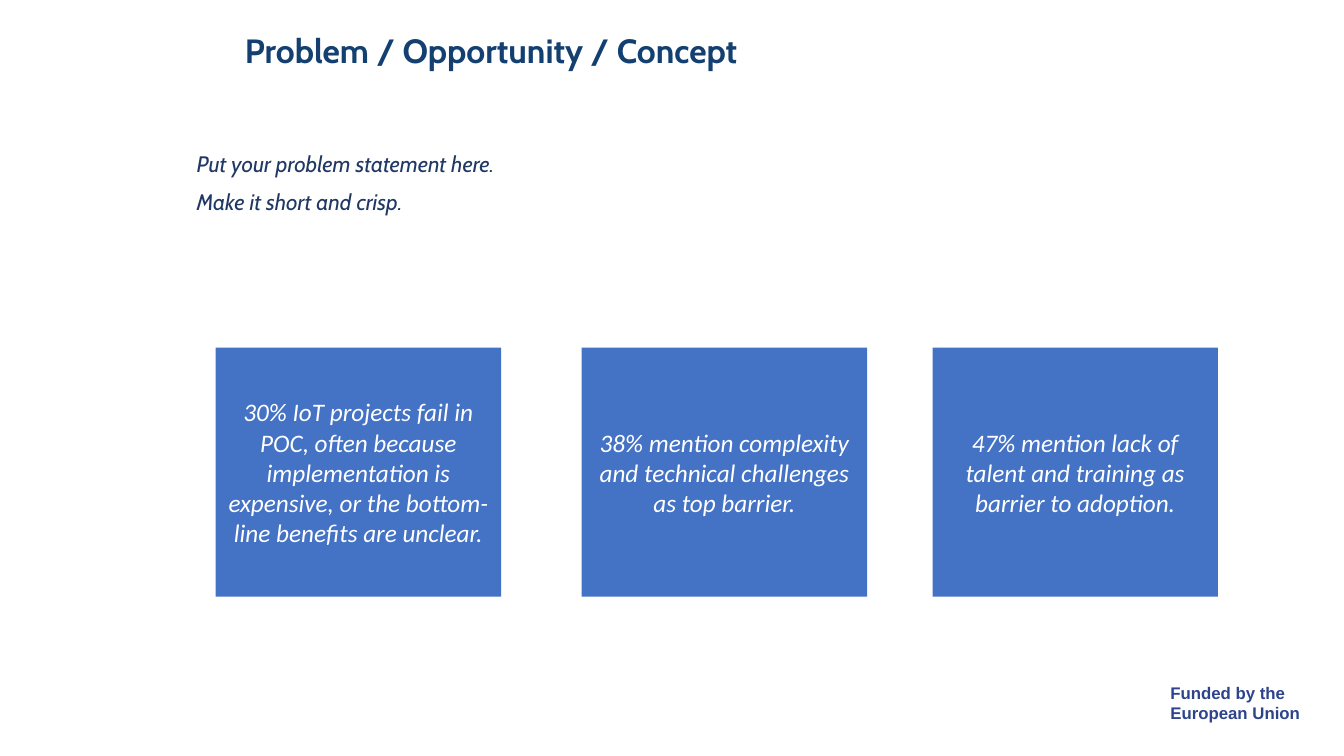
import pptx
import pptx.util
import pptx.dml.color
import pptx.enum.shapes
import pptx.enum.text
import pptx.oxml

Inches, Pt = pptx.util.Inches, pptx.util.Pt
ALIGN = pptx.enum.text.PP_ALIGN
ANCHOR = pptx.enum.text.MSO_ANCHOR

COLOURS = {
    "title": "134070",
    "body": "203864",
    "card": "4472C4",
    "white": "FFFFFF",
    "fund": "2D438B",
}
CARDS = [
    (2.14, "30% IoT projects fail in POC, often because implementation is "
           "expensive, or the bottom-line benefits are unclear."),
    (5.77, "38% mention complexity and technical challenges as top barrier."),
    (9.25, "47% mention lack of talent and training as barrier to adoption."),
]


def colour(name):
    return pptx.dml.color.RGBColor.from_string(COLOURS[name])


def place(shape, box):
    shape.left, shape.top, shape.width, shape.height = map(Inches, box)


def write(shape, lines, face, size, tint, bold=False, italic=False,
          align=ALIGN.LEFT, anchor=ANCHOR.TOP, gap=0, spacing=1.0):
    """Fill a shape with unbulleted paragraphs of one style."""
    frame = shape.text_frame
    frame.text = "\n".join(lines)
    frame.word_wrap = True
    frame.auto_size = pptx.enum.text.MSO_AUTO_SIZE.NONE
    frame.vertical_anchor = anchor
    for i, para in enumerate(frame.paragraphs):
        props = para._p.get_or_add_pPr()
        props.set("marL", "0")
        props.set("indent", "0")
        props.append(pptx.oxml.parse_xml(
            '<a:buNone xmlns:a="http://schemas.openxmlformats.org/'
            'drawingml/2006/main"/>'))
        para.alignment = align
        para.line_spacing = spacing
        para.space_before = Pt(gap if i else 0)
        font = para.font
        font.name, font.size = face, Pt(size)
        font.bold, font.italic = bold, italic
        font.color.rgb = colour(tint)


def add_title(slide, box):
    title = slide.shapes.title
    place(title, box)
    write(title, ["Problem / Opportunity / Concept"], "Cabin", 24, "title",
          bold=True, anchor=ANCHOR.MIDDLE, spacing=0.9)


def add_body(slide, box):
    body = slide.placeholders[1]
    place(body, box)
    write(body, ["Put your problem statement here.",
                 "Make it short and crisp."],
          "Cabin", 16, "body", italic=True, gap=10, spacing=0.9)
    body.text_frame.margin_top = Inches(0.49)


def add_card(slide, box, text):
    card = slide.shapes.add_shape(
        pptx.enum.shapes.MSO_SHAPE.RECTANGLE, *map(Inches, box))
    card.shadow.inherit = False
    card.fill.solid()
    card.fill.fore_color.rgb = colour("card")
    card.line.fill.background()
    write(card, [text], "Calibri", 18, "white", italic=True,
          align=ALIGN.CENTER, anchor=ANCHOR.MIDDLE)


def add_fund(slide, box):
    note = slide.shapes.add_textbox(*map(Inches, box))
    write(note, ["Funded by the", "European Union"], "Arial", 12, "fund",
          bold=True)


def main():
    deck = pptx.Presentation()
    deck.slide_width, deck.slide_height = Inches(13.33), Inches(7.5)
    slide = deck.slides.add_slide(deck.slide_layouts[1])
    add_title(slide, (2.33, 0.31, 10.58, 0.42))
    add_body(slide, (1.85, 1.03, 11.07, 5.56))
    for left, text in CARDS:
        add_card(slide, (left, 3.45, 2.83, 2.47), text)
    add_fund(slide, (11.51, 6.72, 1.59, 0.5))
    deck.save("out.pptx")


if __name__ == "__main__":
    main()
